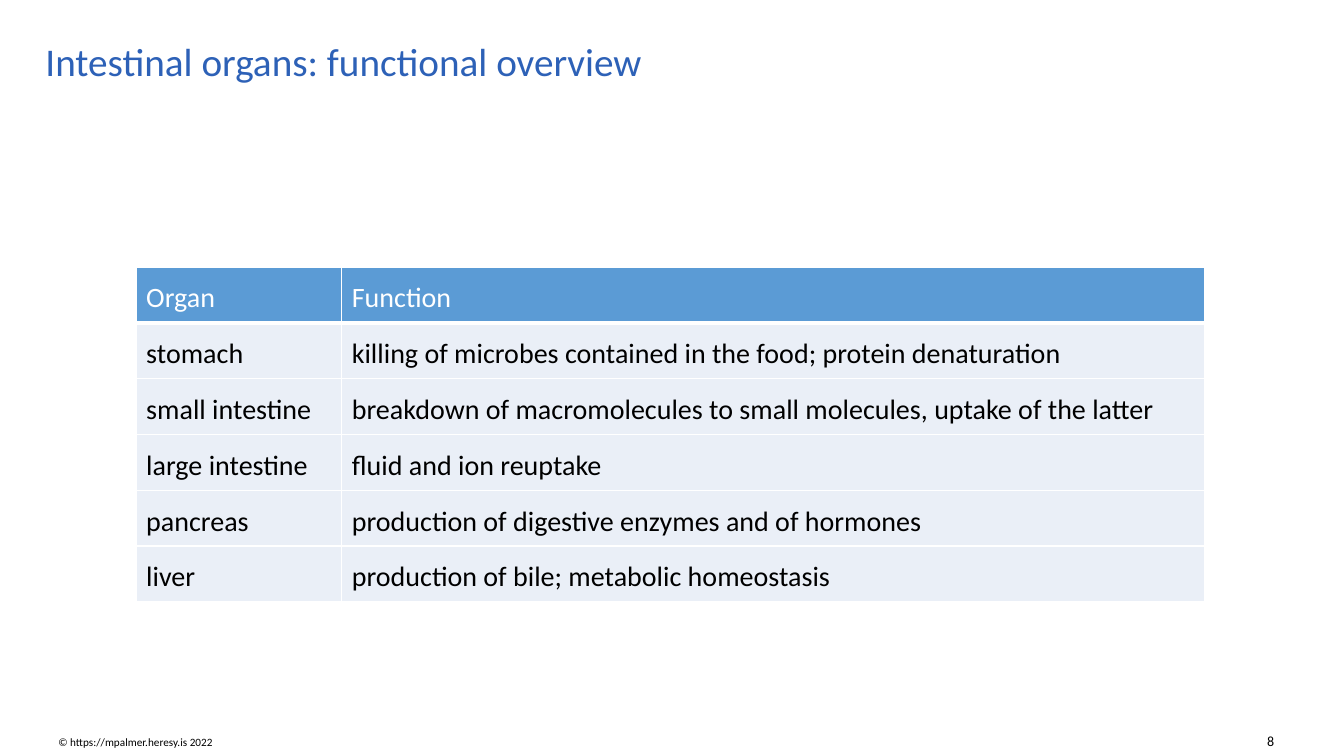
from lxml import etree
from pptx import Presentation, util as u
from pptx.dml.color import RGBColor
from pptx.enum import text
from pptx.oxml.ns import qn

WIDTH, HEIGHT = u.Inches(13.33), u.Inches(7.5)
FONT = "Calibri"
ORGANS = [
    ("Organ", "Function"),
    ("stomach", "killing of microbes contained in the food; protein denaturation"),
    ("small intestine", "breakdown of macromolecules to small molecules, uptake of the latter"),
    ("large intestine", "fluid and ion reuptake"),
    ("pancreas", "production of digestive enzymes and of hormones"),
    ("liver", "production of bile; metabolic homeostasis"),
]
COLUMN_SHARES = (15.3, 64.2)
ROW_SHARE = 6.67
CELL_FORMAT = {
    "margin_left": u.Inches(0.1), "margin_right": u.Inches(0.1),
    "margin_top": u.Inches(0.14), "margin_bottom": u.Inches(0.08),
}


def color(value):
    return RGBColor.from_string(value)


def across(percent):
    return round(WIDTH * percent / 100)


def down(percent):
    return round(HEIGHT * percent / 100)


def box(left, top, width, height):
    return across(left), down(top), across(width), down(height)


def apply(obj, values):
    for name, value in values.items():
        setattr(obj, name, value)


def write(tf, content, size, fill, **paragraph):
    p = tf.paragraphs[0]
    apply(p, paragraph)
    r = p.add_run()
    r.text = content
    apply(r.font, {"name": FONT, "size": u.Pt(size)})
    r.font.color.rgb = color(fill)


def add_title(s, content):
    sp = s.shapes.title
    apply(sp, dict(zip(("left", "top", "width", "height"), box(2.63, 3.2, 95.25, 10.4))))
    apply(sp.text_frame, {"vertical_anchor": text.MSO_ANCHOR.MIDDLE, "word_wrap": True})
    write(sp.text_frame, content, 28, "2D61B7",
          alignment=text.PP_ALIGN.LEFT, line_spacing=0.9)


def add_footer(s, content, place, size, align):
    tf = s.shapes.add_textbox(*box(*place)).text_frame
    apply(tf, {"word_wrap": True, "vertical_anchor": text.MSO_ANCHOR.BOTTOM,
               "auto_size": text.MSO_AUTO_SIZE.SHAPE_TO_FIT_TEXT})
    write(tf, content, size, "000000", alignment=align)


def add_borders(cell, widths):
    tc_pr = cell._tc.get_or_add_tcPr()
    for side, points in widths.items():
        ln = etree.SubElement(tc_pr, qn(f"a:ln{side}"), w=str(u.Pt(points)))
        fill = etree.SubElement(ln, qn("a:solidFill"))
        etree.SubElement(fill, qn("a:srgbClr"), val="FFFFFF")


def add_organ_table(s):
    place = box(10.13, 35.33, sum(COLUMN_SHARES), ROW_SHARE * len(ORGANS))
    table = s.shapes.add_table(len(ORGANS), len(COLUMN_SHARES), *place).table
    table.horz_banding = False
    for column, share in zip(table.columns, COLUMN_SHARES):
        column.width = across(share)
    for i, (row, organ) in enumerate(zip(table.rows, ORGANS)):
        row.height = down(ROW_SHARE)
        header = i == 0
        for cell, content in zip(row.cells, organ):
            apply(cell, CELL_FORMAT)
            add_borders(cell, {"L": 1, "R": 1, "T": 1, "B": 3 if header else 1})
            cell.fill.solid()
            cell.fill.fore_color.rgb = color("5B9BD5" if header else "EAEFF7")
            write(cell.text_frame, content, 20, "FFFFFF" if header else "000000")
            cell.text_frame.paragraphs[0].runs[0].font.bold = False


def main():
    prs = Presentation()
    apply(prs, {"slide_width": WIDTH, "slide_height": HEIGHT})
    s = prs.slides.add_slide(prs.slide_layouts[5])
    add_footer(s, "© https://mpalmer.heresy.is 2022", (3.6, 96.67, 23.55, 3.07), 8,
               text.PP_ALIGN.LEFT)
    add_footer(s, "8", (90.3, 96.13, 5.25, 3.6), 10, text.PP_ALIGN.RIGHT)
    add_title(s, "Intestinal organs: functional overview")
    add_organ_table(s)
    prs.save("out.pptx")


if __name__ == "__main__":
    main()
